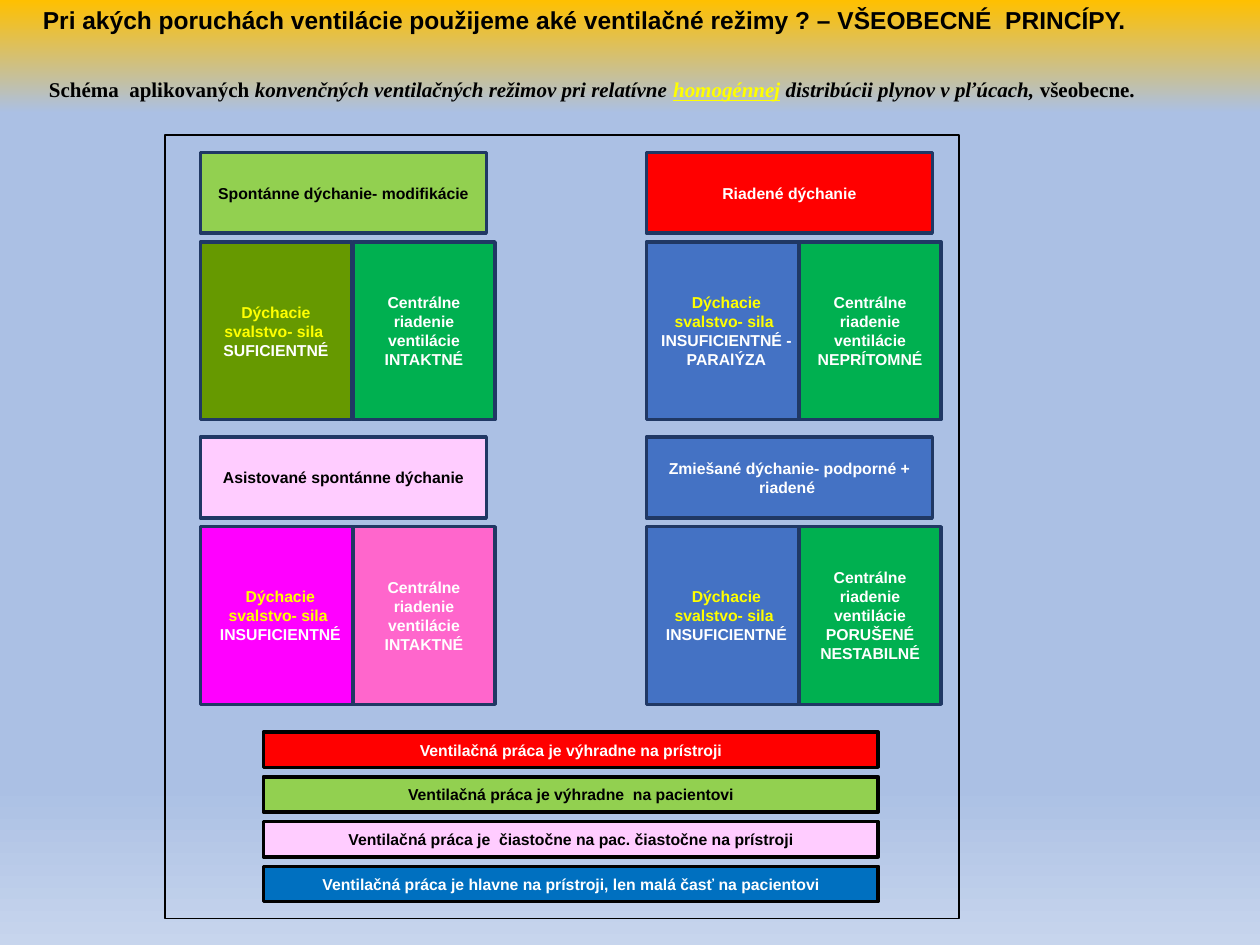
"""Build the slide on ventilation modes by type of breathing disorder."""
from dataclasses import dataclass

from pptx import Presentation
from pptx import util as u
from pptx.dml.color import RGBColor
from pptx.enum import shapes, text
from pptx.oxml import parse_xml
from pptx.oxml.ns import nsdecls, qn

BLACK, WHITE, YELLOW = "000000", "FFFFFF", "FFFF00"
NAVY, BLUE, GREEN, RED = "203864", "4472C4", "00B050", "FF0000"
LIME, PINK = "92D050", "FFCCFF"
LEFT, TOP, COLUMN_PITCH, ROW_PITCH = 1.59, 1.21, 3.54, 2.26
HEADER_WIDTH, HEADER_HEIGHT = 2.27, 0.64
PANEL_DROP, PANEL_HEIGHT = 0.71, 1.41
CENTRAL_OFFSET, CENTRAL_WIDTH = 1.21, 1.13
BAR_LEFT, BAR_TOP, BAR_PITCH, BAR_WIDTH, BAR_HEIGHT = 2.09, 5.81, 0.355, 4.88, 0.28
MUSCLES = "Dýchacie svalstvo- sila "
CENTRAL = "Centrálne riadenie ventilácie"
BACKGROUND = [(0, "FFC000"), (12, "ABC0E4"), (83, "ABC0E4"), (100, "C7D5ED")]


@dataclass
class Mode:
    """A breathing mode in one cell of the two by two grid."""
    column: int
    row: int
    name: str
    fill: str
    color: str
    muscle_state: str
    muscle_fill: str
    central_states: list[str]
    central_fill: str
    muscle_width: float = 1.27


@dataclass
class Span:
    """A stretch of text with its own look."""
    words: str
    color: str = BLACK
    italic: bool = True
    underline: bool = False


MODES = [
    Mode(0, 0, "Spontánne dýchanie- modifikácie", LIME, BLACK,
         "SUFICIENTNÉ", "669900", ["INTAKTNÉ"], GREEN, 1.2),
    Mode(0, 1, "Asistované spontánne dýchanie", PINK, BLACK,
         "INSUFICIENTNÉ", "FF00FF", ["INTAKTNÉ"], "FF66CC"),
    Mode(1, 1, "Zmiešané dýchanie- podporné + riadené ", BLUE, WHITE,
         "INSUFICIENTNÉ", BLUE, ["PORUŠENÉ", "NESTABILNÉ"], GREEN),
    Mode(1, 0, "Riadené dýchanie", RED, WHITE,
         "INSUFICIENTNÉ - PARAlÝZA", BLUE, ["NEPRÍTOMNÉ"], GREEN),
]
BARS = [
    ("Ventilačná práca je výhradne na prístroji", RED, WHITE),
    ("Ventilačná práca je výhradne  na pacientovi", LIME, BLACK),
    ("Ventilačná práca je  čiastočne na pac. čiastočne na prístroji", PINK, BLACK),
    ("Ventilačná práca je hlavne na prístroji, len malá časť na pacientovi",
     "0070C0", WHITE),
]
SUBTITLE = [
    Span("Schéma  aplikovaných ", italic=False),
    Span("konvenčných ventilačných režimov pri relatívne "),
    Span("homogénnej", YELLOW, underline=True),
    Span(" distribúcii plynov v\u00a0pľúcach,"),
    Span(" všeobecne.", italic=False),
]


def rgb(color: str) -> RGBColor:
    """Turn a hex string into a colour."""
    return RGBColor.from_string(color)


def style(font, size: float, color: str, name: str = "Arial") -> None:
    """Set a bold font with the given size, colour and name."""
    font.name, font.size, font.bold = name, u.Pt(size), True
    font.color.rgb = rgb(color)


def place(shape, left: float, top: float, width: float, height: float) -> None:
    """Move and size a shape in inches."""
    shape.left, shape.top = u.Inches(left), u.Inches(top)
    shape.width, shape.height = u.Inches(width), u.Inches(height)


def paint_background(page) -> None:
    """Fill the page with a vertical gradient."""
    page.background.fill.gradient()
    stops = "".join(f'<a:gs pos="{share * 1000}"><a:srgbClr val="{color}"/></a:gs>'
                    for share, color in BACKGROUND)
    gradient = parse_xml(f'<a:gradFill {nsdecls("a")} rotWithShape="1"><a:gsLst>{stops}'
                         '</a:gsLst><a:lin ang="5400000" scaled="0"/></a:gradFill>')
    old = next(page.element.iter(qn("a:gradFill")))
    old.getparent().replace(old, gradient)


def add_box(page, left: float, top: float, width: float, height: float,
            fill: str | None, line: str, lines: list[tuple[str, str]],
            weight: float = 2) -> None:
    """Draw a rectangle with centred lines, each given as words and colour."""
    box = page.shapes.add_shape(shapes.MSO_SHAPE.RECTANGLE, 0, 0, 0, 0)
    place(box, left, top, width, height)
    box.shadow.inherit = False
    if fill:
        box.fill.solid()
        box.fill.fore_color.rgb = rgb(fill)
    else:
        box.fill.background()
    box.line.color.rgb = rgb(line)
    box.line.width = u.Pt(weight)
    frame = box.text_frame
    frame.word_wrap = True
    frame.vertical_anchor = text.MSO_ANCHOR.MIDDLE
    frame.text = "\n".join(words for words, _ in lines)
    for para, (_, color) in zip(frame.paragraphs, lines):
        para.alignment = text.PP_ALIGN.CENTER
        for span in para.runs:
            style(span.font, 9, color)


def add_mode(page, mode: Mode) -> None:
    """Draw a mode's header above its muscle and central panels."""
    left = LEFT + mode.column * COLUMN_PITCH
    top = TOP + mode.row * ROW_PITCH
    add_box(page, left, top, HEADER_WIDTH, HEADER_HEIGHT,
            mode.fill, NAVY, [(mode.name, mode.color)])
    add_box(page, left, top + PANEL_DROP, mode.muscle_width, PANEL_HEIGHT,
            mode.muscle_fill, NAVY, [(MUSCLES, YELLOW), (mode.muscle_state, WHITE)])
    add_box(page, left + CENTRAL_OFFSET, top + PANEL_DROP, CENTRAL_WIDTH, PANEL_HEIGHT,
            mode.central_fill, NAVY,
            [(words, WHITE) for words in [CENTRAL, *mode.central_states]])


def add_title(page) -> None:
    """Fill and format the title placeholder."""
    title = page.shapes.title
    place(title, 0.24, -0.01, 8.9, 0.57)
    frame = title.text_frame
    frame.text = ("Pri akých poruchách ventilácie použijeme aké ventilačné režimy ? "
                  "– VŠEOBECNÉ  PRINCÍPY.")
    frame.word_wrap = False
    frame.auto_size = text.MSO_AUTO_SIZE.NONE
    frame.vertical_anchor = text.MSO_ANCHOR.TOP
    para = frame.paragraphs[0]
    para.alignment = text.PP_ALIGN.LEFT
    style(para.runs[0].font, 14, BLACK)


def add_subtitle(page) -> None:
    """Write the mixed-format line below the title."""
    box = page.shapes.add_textbox(0, 0, 0, 0)
    place(box, 0.29, 0.58, 8.92, 0.23)
    frame = box.text_frame
    frame.word_wrap = False
    frame.vertical_anchor = text.MSO_ANCHOR.MIDDLE
    frame.margin_top, frame.margin_bottom = u.Inches(0.03), 0
    for part in SUBTITLE:
        span = frame.paragraphs[0].add_run()
        span.text = part.words
        style(span.font, 12, part.color, "Times New Roman")
        span.font.italic, span.font.underline = part.italic, part.underline


def main() -> None:
    """Build and save the deck."""
    deck = Presentation()
    deck.slide_width, deck.slide_height = u.Inches(10), u.Inches(7.5)
    page = deck.slides.add_slide(deck.slide_layouts.get_by_name("Title Only"))
    paint_background(page)
    add_title(page)
    add_subtitle(page)
    for mode in MODES:
        add_mode(page, mode)
    for index, (words, fill, color) in enumerate(BARS):
        add_box(page, BAR_LEFT, BAR_TOP + index * BAR_PITCH, BAR_WIDTH, BAR_HEIGHT,
                fill, BLACK, [(words, color)])
    add_box(page, 1.31, 1.07, 6.3, 6.22, None, BLACK, [], weight=1)
    deck.save("out.pptx")


if __name__ == "__main__":
    main()
